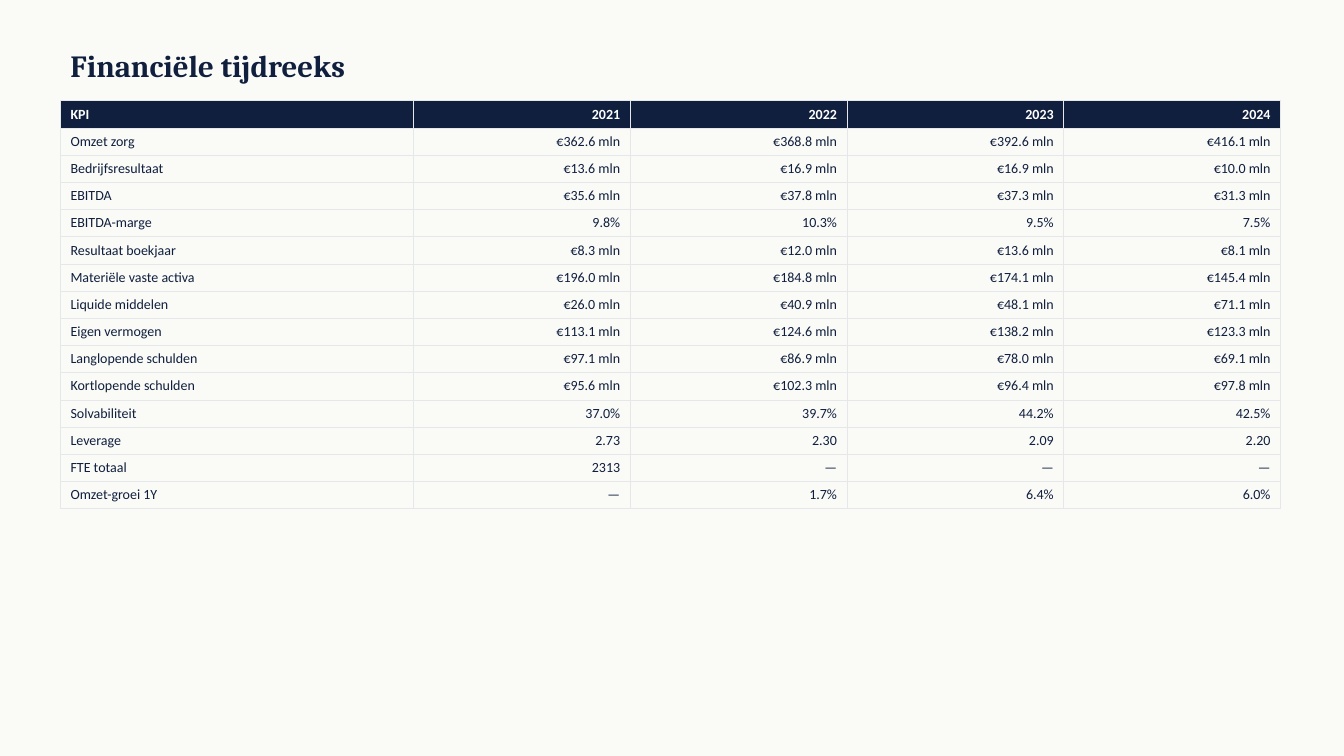
"""Build the slide with the financial time series table."""
from typing import NamedTuple

from lxml.etree import SubElement
from pptx import Presentation
from pptx.dml.color import RGBColor
from pptx.enum.text import MSO_ANCHOR as Anchor, PP_ALIGN as Align
from pptx.oxml.ns import qn
from pptx.util import Emu, Pt

PX = 9144
COLORS = {"paper": "FAFAF7", "navy": "0F1F3D", "white": "FFFFFF", "grid": "E5E7EB"}
HEADER = ("KPI", "2021", "2022", "2023", "2024")
COLUMN_WIDTHS = (350, 215, 215, 215, 215)
ROW_HEIGHT = 27


class Kpi(NamedTuple):
    label: str
    values: tuple[str, ...]


class Area(NamedTuple):
    left: int
    top: int
    width: int
    height: int

    def emu(self) -> list[Emu]:
        return [px(length) for length in self]


KPIS = (
    Kpi("Omzet zorg", ("€362.6 mln", "€368.8 mln", "€392.6 mln", "€416.1 mln")),
    Kpi("Bedrijfsresultaat", ("€13.6 mln", "€16.9 mln", "€16.9 mln", "€10.0 mln")),
    Kpi("EBITDA", ("€35.6 mln", "€37.8 mln", "€37.3 mln", "€31.3 mln")),
    Kpi("EBITDA-marge", ("9.8%", "10.3%", "9.5%", "7.5%")),
    Kpi("Resultaat boekjaar", ("€8.3 mln", "€12.0 mln", "€13.6 mln", "€8.1 mln")),
    Kpi("Materiële vaste activa", ("€196.0 mln", "€184.8 mln", "€174.1 mln", "€145.4 mln")),
    Kpi("Liquide middelen", ("€26.0 mln", "€40.9 mln", "€48.1 mln", "€71.1 mln")),
    Kpi("Eigen vermogen", ("€113.1 mln", "€124.6 mln", "€138.2 mln", "€123.3 mln")),
    Kpi("Langlopende schulden", ("€97.1 mln", "€86.9 mln", "€78.0 mln", "€69.1 mln")),
    Kpi("Kortlopende schulden", ("€95.6 mln", "€102.3 mln", "€96.4 mln", "€97.8 mln")),
    Kpi("Solvabiliteit", ("37.0%", "39.7%", "44.2%", "42.5%")),
    Kpi("Leverage", ("2.73", "2.30", "2.09", "2.20")),
    Kpi("FTE totaal", ("2313", "—", "—", "—")),
    Kpi("Omzet-groei 1Y", ("—", "1.7%", "6.4%", "6.0%")),
)
TITLE_AREA = Area(60, 40, 1200, 50)
TABLE_AREA = Area(60, 100, sum(COLUMN_WIDTHS), ROW_HEIGHT * (len(KPIS) + 1))


def px(length: int) -> Emu:
    return Emu(length * PX)


def color(name: str) -> RGBColor:
    return RGBColor.from_string(COLORS[name])


def write(frame, text: str, *, font: str = "Calibri", size: int = 10,
          ink: str = "navy", bold: bool = False, align: Align = Align.LEFT) -> None:
    para = frame.paragraphs[0]
    para.alignment = align
    span = para.add_run()
    span.text = text
    span.font.name = font
    span.font.size = Pt(size)
    span.font.bold = bold
    span.font.color.rgb = color(ink)


def add_borders(cell) -> None:
    properties = cell._tc.get_or_add_tcPr()
    for side in ("a:lnL", "a:lnR", "a:lnT", "a:lnB"):
        line = SubElement(properties, qn(side), w=str(Pt(0.5)))
        fill = SubElement(line, qn("a:solidFill"))
        SubElement(fill, qn("a:srgbClr"), val=COLORS["grid"])


def add_title(page, text: str) -> None:
    box = page.shapes.add_textbox(*TITLE_AREA.emu())
    box.text_frame.word_wrap = True
    box.text_frame.vertical_anchor = Anchor.MIDDLE
    write(box.text_frame, text, font="Cambria", size=22, bold=True)


def add_kpi_table(page) -> None:
    rows = [HEADER, *((kpi.label, *kpi.values) for kpi in KPIS)]
    table = page.shapes.add_table(len(rows), len(HEADER), *TABLE_AREA.emu()).table
    table.horz_banding = False
    for column, width in zip(table.columns, COLUMN_WIDTHS):
        column.width = px(width)
    for row_index, texts in enumerate(rows):
        is_header = row_index == 0
        for column_index, text in enumerate(texts):
            cell = table.cell(row_index, column_index)
            add_borders(cell)
            if is_header:
                cell.fill.solid()
                cell.fill.fore_color.rgb = color("navy")
            else:
                cell.fill.background()
            write(cell.text_frame, text, bold=is_header,
                  ink="white" if is_header else "navy",
                  align=Align.RIGHT if column_index else Align.LEFT)


def main() -> None:
    deck = Presentation()
    deck.slide_width, deck.slide_height = px(1333), px(750)
    page = deck.slides.add_slide(deck.slide_layouts[6])
    page.background.fill.solid()
    page.background.fill.fore_color.rgb = color("paper")
    add_title(page, "Financiële tijdreeks")
    add_kpi_table(page)
    deck.save("out.pptx")


if __name__ == "__main__":
    main()
